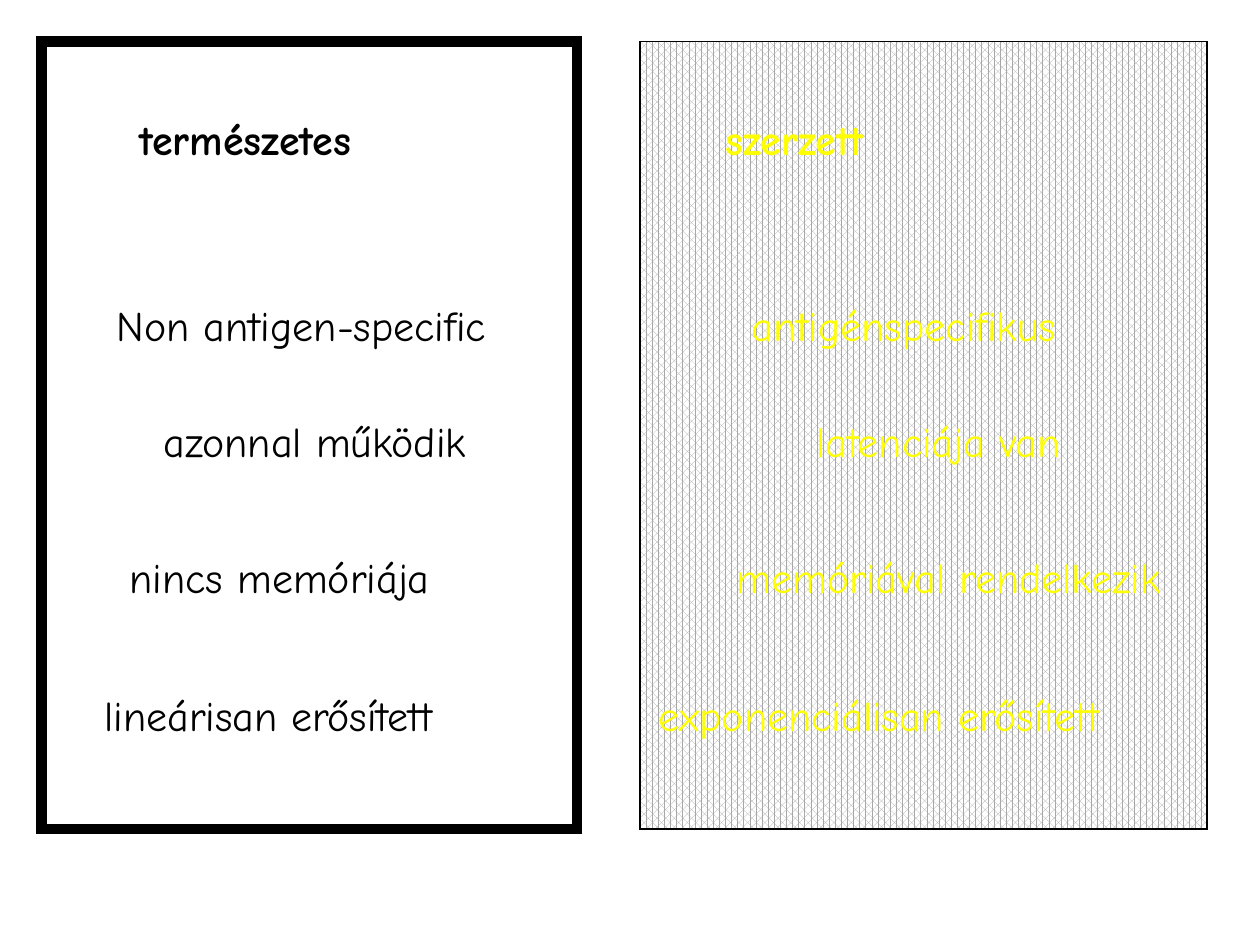
from dataclasses import dataclass
from typing import Optional

from pptx import Presentation
from pptx.dml.color import RGBColor
from pptx.enum.dml import MSO_PATTERN
from pptx.enum.shapes import MSO_SHAPE
from pptx.oxml import parse_xml
from pptx.oxml.ns import nsdecls
from pptx.util import Inches, Pt


@dataclass(frozen=True)
class Theme:
    font: str = "Comic Neue"
    size: Pt = Pt(24)
    innate: RGBColor = RGBColor(0x00, 0x00, 0x00)
    acquired: RGBColor = RGBColor(0xFF, 0xFF, 0x00)
    line: RGBColor = RGBColor(0x00, 0x00, 0x00)
    pattern_fore: RGBColor = RGBColor(0xA8, 0xA8, 0xA8)
    pattern_back: RGBColor = RGBColor(0xFF, 0xFF, 0xFF)


@dataclass(frozen=True)
class Panel:
    left: float
    width: float
    line_width: float
    pattern: Optional[MSO_PATTERN] = None


@dataclass(frozen=True)
class Row:
    """One contrast; left_x and right_x are where its two texts start."""
    top: float
    innate: str
    left_x: float
    acquired: str
    right_x: float
    end: float
    bold: bool = False


THEME = Theme()
INSET = 0.1
PANEL_TOP, PANEL_HEIGHT = 0.33, 6.25
ROW_HEIGHT = 0.5

ACQUIRED_PANEL = Panel(5.08, 4.5, 0.75, MSO_PATTERN.PERCENT_70)
INNATE_PANEL = Panel(0.33, 4.25, 6)

ROWS = [
    Row(0.85, "természetes", 1.11, "szerzett", 5.76, 8.54, bold=True),
    Row(2.33, "Non antigen-specific", 0.93, "antigénspecifikus", 5.97, 9),
    Row(3.25, "azonnal működik", 1.3, "latenciája van", 6.48, 8.56),
    Row(4.33, "nincs memóriája", 1.03, "memóriával rendelkezik", 5.85, 9.61),
    Row(5.42, "lineárisan erősített", 0.83, "exponenciálisan erősített", 5.23, 9.55),
]


def add_panel(slide, panel: Panel) -> None:
    sp = slide.shapes.add_shape(
        MSO_SHAPE.RECTANGLE, Inches(panel.left), Inches(PANEL_TOP),
        Inches(panel.width), Inches(PANEL_HEIGHT))
    sp.shadow.inherit = False
    if panel.pattern is None:
        sp.fill.background()
    else:
        sp.fill.patterned()
        sp.fill.pattern = panel.pattern
        sp.fill.fore_color.rgb = THEME.pattern_fore
        sp.fill.back_color.rgb = THEME.pattern_back
    sp.line.color.rgb = THEME.line
    sp.line.width = Pt(panel.line_width)
    # Square outer corners
    sp.line._get_or_add_ln().append(
        parse_xml(f'<a:miter {nsdecls("a")} lim="800000"/>'))


def add_row(slide, row: Row) -> None:
    left = row.left_x - INSET
    sp = slide.shapes.add_textbox(
        Inches(left), Inches(row.top), Inches(row.end - left), Inches(ROW_HEIGHT))
    tf = sp.text_frame
    tf.word_wrap = True
    p = tf.paragraphs[0]
    # The tab stop holds the second text in the right-hand panel
    tab = Inches(row.right_x - row.left_x)
    p._p.get_or_add_pPr().append(parse_xml(
        f'<a:tabLst {nsdecls("a")}><a:tab pos="{tab}" algn="l"/></a:tabLst>'))
    p.font.name = THEME.font
    p.font.size = THEME.size
    p.font.bold = row.bold
    for text, color in ((row.innate + "\t", THEME.innate),
                        (row.acquired, THEME.acquired)):
        r = p.add_run()
        r.text = text
        r.font.color.rgb = color


def main() -> None:
    prs = Presentation()
    prs.slide_width, prs.slide_height = Inches(10), Inches(7.5)
    slide = prs.slides.add_slide(prs.slide_layouts[6])

    # Patterned panel behind the text, frame on top
    add_panel(slide, ACQUIRED_PANEL)
    for row in ROWS:
        add_row(slide, row)
    add_panel(slide, INNATE_PANEL)

    prs.save("out.pptx")


if __name__ == "__main__":
    main()
